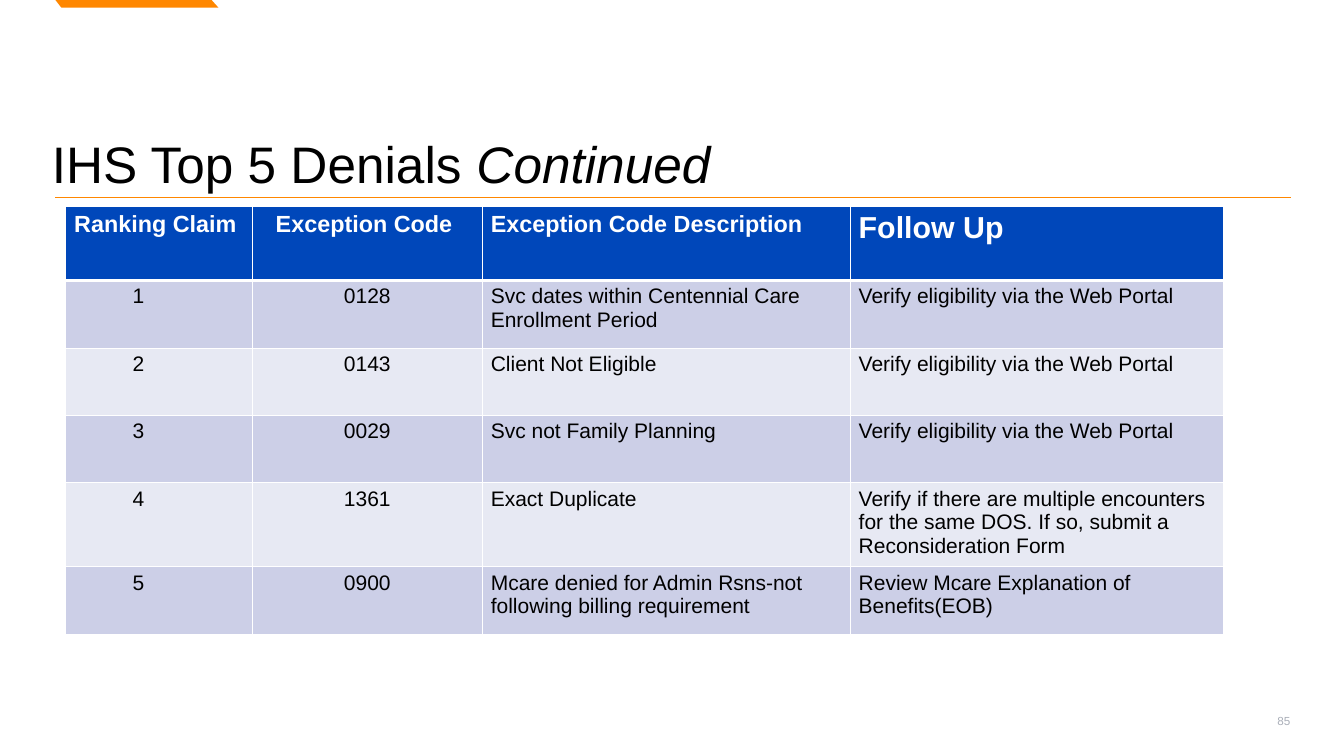
"""Build the slide listing the top five denials with their follow-up."""
from dataclasses import dataclass

from lxml import etree
from pptx import Presentation, util as u
from pptx.dml.color import RGBColor
from pptx.enum import shapes, text
from pptx.oxml import ns

COLORS = {
    "orange": "FF8700",
    "blue": "0047BA",
    "dark_band": "CCCFE7",
    "light_band": "E7E9F3",
    "white": "FFFFFF",
    "black": "000000",
    "grey": "AAAFB9",
}
FONT = "Arial"
LEFT, CENTER, RIGHT = text.PP_ALIGN.LEFT, text.PP_ALIGN.CENTER, text.PP_ALIGN.RIGHT
CELL_MARGIN = 7.2
RANK_INDENT = 50


@dataclass(frozen=True)
class Column:
    heading: str
    width: float
    align: text.PP_ALIGN = LEFT
    heading_size: float = 20
    indent: float = 0


@dataclass(frozen=True)
class Denial:
    code: str
    description: str
    follow_up: str
    height: float = 57.6


COLUMNS = [
    Column("Ranking Claim", 159.84, indent=RANK_INDENT),
    Column("Exception Code ", 197.28, CENTER),
    Column("Exception Code Description", 315.36),
    Column("Follow Up", 319.68, heading_size=26),
]
HEADER_HEIGHT = 63.2
VERIFY = "Verify eligibility via the Web Portal"
DENIALS = [
    Denial("0128", "Svc dates within Centennial Care Enrollment Period", VERIFY, 58.3),
    Denial("0143", "Client Not Eligible", VERIFY),
    Denial("0029", "Svc not Family Planning", VERIFY),
    Denial("1361", "Exact Duplicate",
           "Verify if there are multiple encounters for the same DOS. "
           "If so, submit a Reconsideration Form"),
    Denial("0900", "Mcare denied for Admin Rsns-not following billing requirement",
           "Review Mcare Explanation of Benefits(EOB)"),
]


def color(name: str) -> RGBColor:
    return RGBColor.from_string(COLORS[name])


def add_text(paragraph, content: str, *, size: float, fill: str = "black",
             bold: bool = False, italic: bool = False, align: text.PP_ALIGN = LEFT) -> None:
    paragraph.alignment = align
    run = paragraph.add_run()
    run.text = content
    run.font.name = FONT
    run.font.size = u.Pt(size)
    run.font.bold = bold
    run.font.italic = italic
    run.font.color.rgb = color(fill)


def add_box(slide, left: float, top: float, width: float, height: float,
            anchor: text.MSO_ANCHOR, side: float, vertical: float):
    shape = slide.shapes.add_textbox(u.Pt(left), u.Pt(top), u.Pt(width), u.Pt(height))
    frame = shape.text_frame
    frame.word_wrap = True
    frame.vertical_anchor = anchor
    frame.margin_left = frame.margin_right = u.Pt(side)
    frame.margin_top = frame.margin_bottom = u.Pt(vertical)
    return frame.paragraphs[0]


def add_tab(slide) -> None:
    corners = [(u.Pt(x), u.Pt(y)) for x, y in
               [(47.5, 0), (52.6, 6.5), (187.2, 6.5), (181.4, 0)]]
    builder = slide.shapes.build_freeform(*corners[0])
    builder.add_line_segments(corners[1:], close=True)
    shape = builder.convert_to_shape()
    shape.shadow.inherit = False
    shape.fill.solid()
    shape.fill.fore_color.rgb = color("orange")
    shape.line.fill.background()


def add_rule(slide) -> None:
    rule = slide.shapes.add_connector(
        shapes.MSO_CONNECTOR.STRAIGHT, u.Pt(47.5), u.Pt(169.2), u.Pt(1106.6), u.Pt(169.2))
    rule.line.color.rgb = color("orange")
    rule.line.width = u.Pt(1)
    etree.SubElement(rule._element.spPr, ns.qn("a:effectLst"))


def format_cell(cell, fill: str, bottom_width: float) -> None:
    properties = cell._tc.get_or_add_tcPr()
    for side, width in {"L": 1, "R": 1, "T": 1, "B": bottom_width}.items():
        border = etree.SubElement(properties, ns.qn(f"a:ln{side}"), w=str(u.Pt(width)))
        solid = etree.SubElement(border, ns.qn("a:solidFill"))
        etree.SubElement(solid, ns.qn("a:srgbClr"), val=COLORS["white"])
    cell.fill.solid()
    cell.fill.fore_color.rgb = color(fill)


def add_denials(slide) -> None:
    heights = [HEADER_HEIGHT] + [denial.height for denial in DENIALS]
    widths = [column.width for column in COLUMNS]
    table = slide.shapes.add_table(
        len(heights), len(widths), u.Pt(56.4), u.Pt(177.2),
        u.Pt(sum(widths)), u.Pt(sum(heights))).table
    for row, height in zip(table.rows, heights):
        row.height = u.Pt(height)
    for index, column in enumerate(COLUMNS):
        table.columns[index].width = u.Pt(column.width)
        cell = table.cell(0, index)
        format_cell(cell, "blue", 3)
        add_text(cell.text_frame.paragraphs[0], column.heading, size=column.heading_size,
                 fill="white", bold=True, align=column.align)
    for rank, denial in enumerate(DENIALS, start=1):
        band = "dark_band" if rank % 2 else "light_band"
        values = [str(rank), denial.code, denial.description, denial.follow_up]
        for index, (column, value) in enumerate(zip(COLUMNS, values)):
            cell = table.cell(rank, index)
            format_cell(cell, band, 1)
            cell.margin_left = u.Pt(CELL_MARGIN + column.indent)
            add_text(cell.text_frame.paragraphs[0], value, size=18, align=column.align)


def main() -> None:
    presentation = Presentation()
    presentation.slide_width, presentation.slide_height = u.Pt(1152), u.Pt(648)
    slide = presentation.slides.add_slide(presentation.slide_layouts[6])
    add_rule(slide)
    add_tab(slide)
    title = add_box(slide, 37.4, 54.7, 1069.2, 111.6, text.MSO_ANCHOR.BOTTOM, 7.2, 0)
    add_text(title, "IHS Top 5 Denials ", size=44)
    add_text(title, "Continued", size=44, italic=True)
    number = add_box(slide, 847.4, 600.5, 268.6, 34.6, text.MSO_ANCHOR.MIDDLE, 10, 5)
    add_text(number, "85", size=10, fill="grey", align=RIGHT)
    add_denials(slide)
    presentation.save("out.pptx")


if __name__ == "__main__":
    main()
